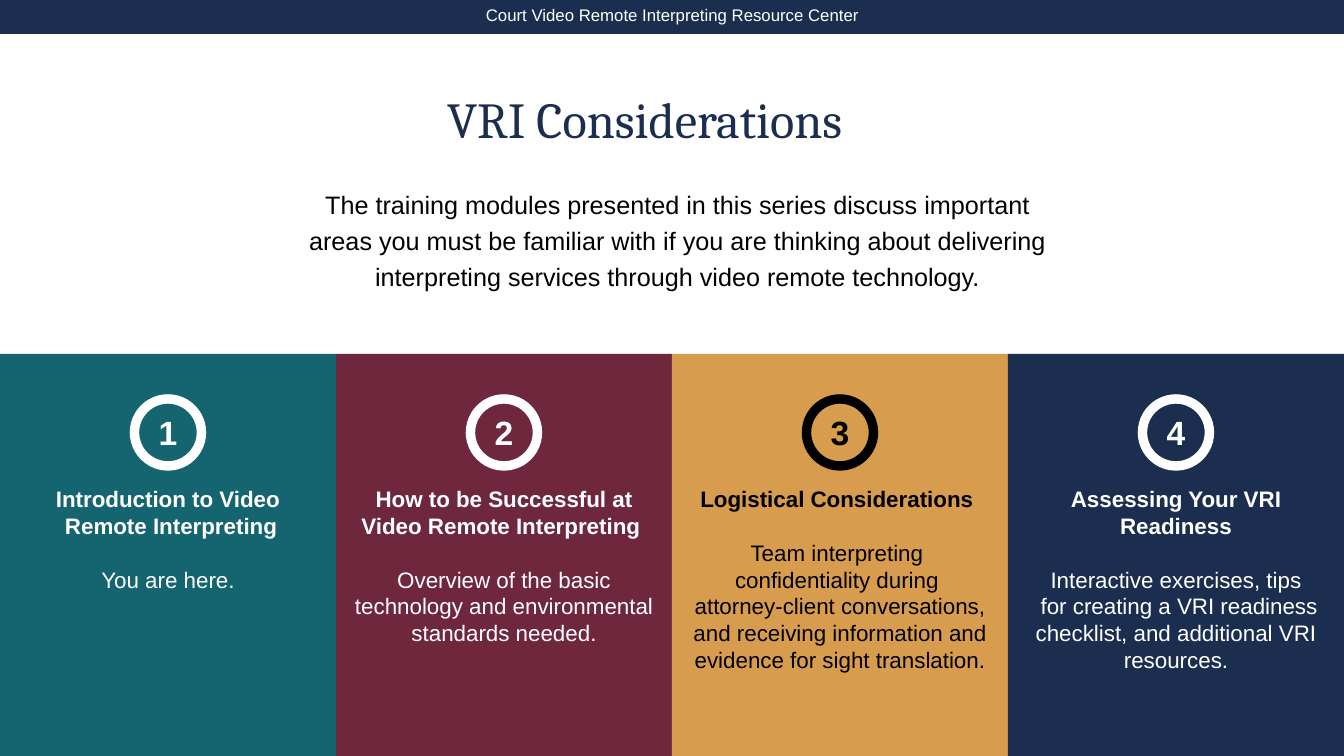
from pptx import Presentation
from pptx.dml.color import RGBColor
from pptx.enum.shapes import MSO_SHAPE
from pptx.enum.text import MSO_ANCHOR, MSO_AUTO_SIZE, PP_ALIGN
from pptx.util import Pt

COLORS = {"navy": "1C2E4F", "teal": "156570", "wine": "6E273D",
          "gold": "D79C4D", "white": "FFFFFF", "black": "000000"}
BANNER = "Court Video Remote Interpreting Resource Center"
TITLE = "VRI Considerations"
INTRO = ("The training modules presented in this series discuss important areas "
         "you must be familiar with if you are thinking about delivering "
         "interpreting services through video remote technology.")
MODULES = [  # fill, ink, heading, description
    ("teal", "white", "Introduction to Video\n Remote Interpreting", "You are here."),
    ("wine", "white", "How to be Successful at Video Remote Interpreting ",
     "Overview of the basic technology and environmental standards needed."),
    ("gold", "black", "Logistical Considerations ",
     "Team interpreting \nconfidentiality during \nattorney-client conversations, "
     "and receiving information and evidence for sight translation."),
    ("navy", "white", "Assessing Your VRI Readiness",
     "Interactive exercises, tips\n for creating a VRI readiness checklist, "
     "and additional VRI resources."),
]
PX = 914400 / 100.8
WIDTH, HEIGHT = 1344, 756
PANEL_TOP, RING_TOP, RING = 354, 399, 67
HEADING_GAP = 19.3


def px(*lengths):
    return [round(n * PX) for n in lengths]


def rgb(name):
    return RGBColor.from_string(COLORS[name])


def write(p, text, size, color, bold=False, font="Arial", **paragraph):
    p.text = text
    for key, value in {"alignment": PP_ALIGN.CENTER, **paragraph}.items():
        setattr(p, key, value)
    for r in p.runs:
        for key, value in {"name": font, "size": Pt(size), "bold": bold}.items():
            setattr(r.font, key, value)
        r.font.color.rgb = rgb(color)


def frame(sp, anchor, insets):
    """Set wrapping, anchor and left, top, right, bottom insets."""
    tf = sp.text_frame
    tf.word_wrap, tf.auto_size, tf.vertical_anchor = True, MSO_AUTO_SIZE.NONE, anchor
    for side, inset in zip(("left", "top", "right", "bottom"), px(*insets)):
        setattr(tf, f"margin_{side}", inset)
    return tf


def add_shape(s, kind, box, fill=None, line=None):
    sp = s.shapes.add_shape(kind, *px(*box))
    sp.shadow.inherit = False
    if fill:
        sp.fill.solid()
        sp.fill.fore_color.rgb = rgb(fill)
    else:
        sp.fill.background()
    if line:
        sp.line.color.rgb = rgb(line)
        sp.line.width = Pt(6.75)
    else:
        sp.line.fill.background()
    return sp


def add_module(s, index, module):
    fill, ink, heading, description = module
    width = WIDTH // len(MODULES)
    left = index * width
    panel = add_shape(s, MSO_SHAPE.RECTANGLE,
                      (left, PANEL_TOP, width, HEIGHT - PANEL_TOP), fill)
    tf = frame(panel, MSO_ANCHOR.TOP, (10, 131, 10, 5))
    write(tf.paragraphs[0], heading, 16, ink, True)
    write(tf.add_paragraph(), description, 16, ink, space_before=Pt(HEADING_GAP))
    ring = add_shape(s, MSO_SHAPE.OVAL,
                     (left + (width - RING) / 2, RING_TOP, RING, RING), line=ink)
    tf = frame(ring, MSO_ANCHOR.MIDDLE, (10, 5, 10, 5))
    write(tf.paragraphs[0], str(index + 1), 24, ink, True)


def main():
    prs = Presentation()
    prs.slide_width, prs.slide_height = px(WIDTH, HEIGHT)
    s = prs.slides.add_slide(prs.slide_layouts[5])

    title = s.shapes.title
    title.left, title.top, title.width, title.height = px(437, 90, 471, 91)
    tf = frame(title, MSO_ANCHOR.TOP, (10, 5, 10, 5))
    write(tf.paragraphs[0], TITLE, 36, "navy", font="Cambria",
          alignment=PP_ALIGN.LEFT, line_spacing=0.9)

    intro = s.shapes.add_textbox(*px(293, 183, 759, 116))
    tf = frame(intro, MSO_ANCHOR.TOP, (10, 0, 0, 5))
    write(tf.paragraphs[0], INTRO, 18, "black", line_spacing=1.2, space_before=Pt(10))

    banner = add_shape(s, MSO_SHAPE.RECTANGLE, (-13, -4, 1371, 38), "navy")
    tf = frame(banner, MSO_ANCHOR.MIDDLE, (10, 5, 10, 5))
    write(tf.paragraphs[0], BANNER, 12, "white")

    for index, module in enumerate(MODULES):
        add_module(s, index, module)
    prs.save("out.pptx")


if __name__ == "__main__":
    main()
